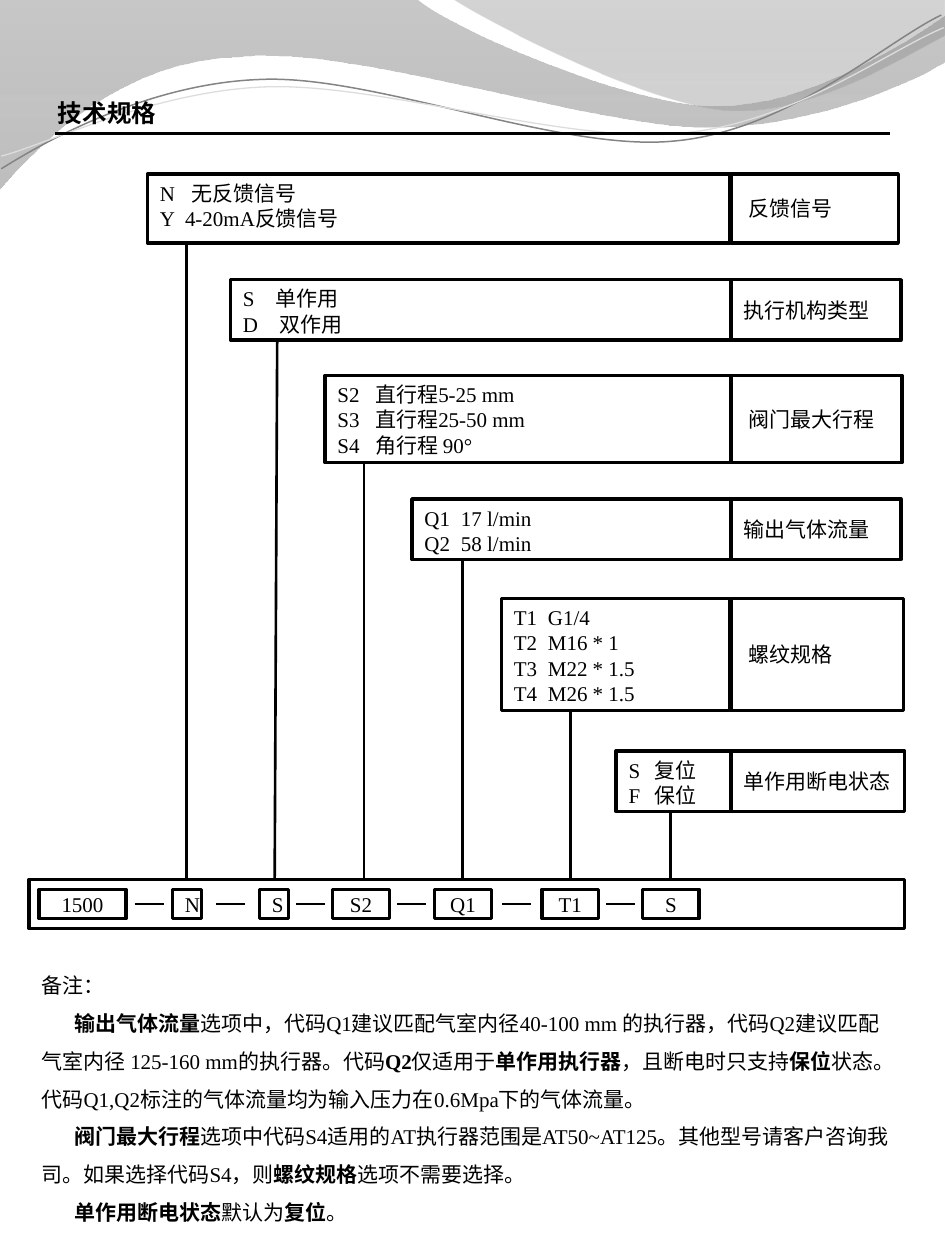
from itertools import pairwise

from lxml.etree import SubElement
from pptx import Presentation
from pptx.dml.color import RGBColor
from pptx.enum.shapes import MSO_CONNECTOR, MSO_SHAPE
from pptx.enum.text import MSO_ANCHOR as Anchor, PP_ALIGN as Align
from pptx.oxml.ns import qn
from pptx.util import Emu, Inches, Pt

BLACK = RGBColor(0x00, 0x00, 0x00)
WHITE = RGBColor(0xFF, 0xFF, 0xFF)
GREY = RGBColor(0x84, 0x84, 0x84)
GREY_LOW = RGBColor(0x88, 0x88, 0x88)
DARK_GREY = RGBColor(0x6F, 0x6F, 0x6F)
MID_GREY = RGBColor(0x9D, 0x9D, 0x9D)
PALE_GREY = RGBColor(0xDD, 0xDD, 0xDD)
SERIF, CJK = "Times New Roman", "Noto Sans CJK SC"

# The slide is a grid of 75 columns by 100 rows of square cells
WIDTH, HEIGHT = Inches(7.5), Inches(10)
CELL = WIDTH / 75
DIVIDER = 58  # column where the option labels begin
DASH = 2.3    # length of a dash between two codes

# code, code box (left, width), stem columns (top, bottom),
# option box (left, top, right, height), right edge of the choices,
# label, label inset, choices (code, tab width, meaning)
OPTIONS = [
    ("N", (13.7, 2.3), (14.8, 14.8), (11.7, 13.8, 71.3, 5.5), 57.9, "反馈信号", 1.4,
     [("N", 2.5, "无反馈信号"), ("Y", 2, "4-20mA反馈信号")]),
    ("S", (20.6, 2.3), (22, 21.8), (18.3, 22.2, 71.5, 4.8), 58.6, "执行机构类型", 1,
     [("S", 2.6, "单作用"), ("D", 2.9, "双作用")]),
    ("S2", (26.4, 4.5), (28.9, 28.9), (25.8, 29.8, 71.6, 6.9), 58, "阀门最大行程", 1.4,
     [("S2", 3, "直行程5-25 mm"), ("S3", 3, "直行程25-50 mm"), ("S4", 3, "角行程 90°")]),
    ("Q1", (34.5, 4.5), (36.7, 36.7), (32.7, 39.6, 71.5, 4.8), 58.6, "输出气体流量", 1,
     [("Q1", 2.9, "17 l/min"), ("Q2", 2.9, "58 l/min")]),
    ("T1", (43, 4.5), (45.3, 45.3), (39.8, 47.5, 71.7, 8.9), 57.9, "螺纹规格", 1.4,
     [("T1", 2.7, "G1/4"), ("T2", 2.7, "M16 * 1"),
      ("T3", 2.7, "M22 * 1.5"), ("T4", 2.7, "M26 * 1.5")]),
    ("S", (51, 4.5), (53.2, 53.2), (48.9, 59.6, 71.8, 4.8), 58.9, "单作用断电状态", 1,
     [("S", 2.1, "复位"), ("F", 2.1, "保位")]),
]

# Notes: runs alternate between regular and bold, starting with regular
NOTES = [
    ["备注："],
    ["", "输出气体流量",
     "选项中，代码Q1建议匹配气室内径40-100 mm 的执行器，代码Q2建议匹配气室内径 125-160 mm的执行器。代码",
     "Q2", "仅适用于", "单作用执行器", "，且断电时只支持", "保位",
     "状态。代码Q1,Q2标注的气体流量均为输入压力在0.6Mpa下的气体流量。"],
    ["", "阀门最大行程",
     "选项中代码S4适用的AT执行器范围是AT50~AT125。其他型号请客户咨询我司。如果选择代码S4，则",
     "螺纹规格", "选项不需要选择。"],
    ["", "单作用断电状态", "默认为", "复位", "。"],
]


def cells(count):
    return Emu(round(count * CELL))


def place(shape, box):
    shape.left, shape.top, shape.width, shape.height = map(cells, box)


def set_font(paragraph, size=12, latin=SERIF):
    font = paragraph.font
    font.size, font.name, font.color.rgb = Pt(size), latin, BLACK
    SubElement(font._element, qn("a:ea"), typeface=CJK)


def set_indent(paragraph, margin, first):
    properties = paragraph._p.get_or_add_pPr()
    properties.set("marL", str(cells(margin)))
    properties.set("indent", str(cells(first)))


def add_line(slide, start, end):
    line = slide.shapes.add_connector(
        MSO_CONNECTOR.STRAIGHT, *map(cells, (*start, *end)))
    line.line.color.rgb, line.line.width = BLACK, Pt(1.5)
    SubElement(line._element.spPr, qn("a:effectLst"))


def add_box(slide, box, lines=(), align=Align.LEFT, anchor=Anchor.MIDDLE, inset=1):
    shape = slide.shapes.add_shape(MSO_SHAPE.RECTANGLE, *map(cells, box))
    shape.shadow.inherit = False
    shape.fill.solid()
    shape.fill.fore_color.rgb = WHITE
    shape.line.color.rgb, shape.line.width = BLACK, Pt(2)
    frame = shape.text_frame
    frame.vertical_anchor = anchor
    frame.margin_left = cells(inset)
    frame.text = "\n".join(lines)
    for paragraph in frame.paragraphs:
        paragraph.alignment = align
        set_font(paragraph)
    return shape


# Header waves
def add_curve(slide, start, controls, corners=(), closed=False):
    """Join cubic curves, three control points each, then straight lines."""
    builder = slide.shapes.build_freeform(*map(cells, start), scale=1.0)
    builder.add_line_segments(
        [tuple(map(cells, point)) for point in [*controls, *corners]], close=closed)
    shape = builder.convert_to_shape()
    shape.shadow.inherit = False
    # Turn each three line segments into one Bezier segment
    segments = list(shape._element.iter(qn("a:lnTo")))[:len(controls)]
    for first in range(0, len(segments), 3):
        trio = segments[first:first + 3]
        outline = trio[0].getparent()
        curve = SubElement(outline, qn("a:cubicBezTo"))
        outline.replace(trio[0], curve)
        for segment in trio:
            curve.append(segment[0])
        for segment in trio[1:]:
            outline.remove(segment)
    return shape


def fill_wave(shape, stops):
    shape.line.fill.background()
    shape.fill.gradient()
    shape.fill.gradient_angle = 270
    for stop, (position, color, opacity) in zip(shape.fill.gradient_stops, stops):
        stop.position, stop.color.rgb = position, color
        SubElement(stop._gs[0], qn("a:alpha"), val=str(opacity * 1000))


def draw_waves(slide):
    broad = add_curve(
        slide, (0, -0.1),
        [(11, -0.1), (22, -0.1), (33, -0.1),
         (35.7, 2.2), (49.8, 8.4), (56.9, 8.4), (64, 8.4), (71.9, 3.4), (75, 1.2),
         (75, 2.4), (75.1, 3.6), (75.1, 4.8),
         (73.8, 5.8), (65.2, 10.1), (55.9, 10.1), (46.6, 10), (28.6, 3.7), (19.3, 4.5),
         (9.7, 4.7), (3.4, 11.1), (-0.1, 15.1)], closed=True)
    fill_wave(broad, [(0, GREY, 45), (1, GREY_LOW, 55)])
    corner = add_curve(
        slide, (35.9, -0.1),
        [(38.2, 1.5), (51.1, 8.2), (57.7, 8.7), (64.2, 9.2), (72.1, 4.3), (75, 2.8)],
        [(75, 0)], closed=True)
    fill_wave(corner, [(0, DARK_GREY, 30), (0.8, MID_GREY, 45)])
    strands = [
        (GREY, 0.85, (-0.13, 11.64),
         [(3.48, 9.6), (11.88, 5.4), (20.79, 5.52), (29.7, 5.54), (44.29, 12.43),
          (53.32, 11.95), (62.45, 11.58), (70.47, 4.85), (74.97, 2.96)]),
        (PALE_GREY, 0.75, (-0.07, 10.63),
         [(3.47, 9.9), (12.26, 6.01), (21.26, 6.13), (30.27, 6.26), (44.72, 11.74),
          (53.65, 11.36), (62.67, 11.09), (70.64, 5.56), (75.13, 3.97)]),
    ]
    for color, width, start, controls in strands:
        strand = add_curve(slide, start, controls)
        strand.rotation = -2.7
        strand.fill.background()
        strand.line.color.rgb, strand.line.width = color, Pt(width)


def draw_title(slide, box):
    title = slide.shapes.title
    slide.shapes._spTree.append(title._element)  # in front of the waves
    place(title, box)
    title.text_frame.text = "技术规格"
    title.text_frame.vertical_anchor = Anchor.TOP
    paragraph = title.text_frame.paragraphs[0]
    paragraph.alignment, paragraph.font.bold = Align.LEFT, True
    set_font(paragraph, 14, CJK)
    left, top, _, height = box
    rule = top + height - 0.1
    add_line(slide, (left + 0.8, rule), (70.6, rule))


def draw_option(slide, box, reach, label, inset, choices):
    left, top, right, height = box
    lines = [f"{code}\t{meaning}" for code, _, meaning in choices]
    shape = add_box(slide, (left, top, reach - left, height), lines, anchor=Anchor.TOP)
    for paragraph, (_, tab, _) in zip(shape.text_frame.paragraphs, choices):
        set_indent(paragraph, tab, -tab)
    add_box(slide, (DIVIDER, top, right - DIVIDER, height), [label], inset=inset)


def draw_order_code(slide, box):
    """Code bar, with a stem from each code up to its options."""
    left, top, _, height = box
    add_box(slide, box)
    codes = [("1500", (left + 0.8, 6.9))] + [option[:2] for option in OPTIONS]
    for code, (code_left, width) in codes:
        add_box(slide, (code_left, top + 0.8, width, 2.3), [code], Align.CENTER)
    middle = top + height / 2
    for (_, (before, width)), (_, (after, _)) in pairwise(codes):
        start = (before + width + after - DASH) / 2
        add_line(slide, (start, middle), (start + DASH, middle))
    for _, _, (upper, lower), (_, option_top, _, option_height), *_ in OPTIONS:
        add_line(slide, (upper, option_top + option_height), (lower, top))


def draw_notes(slide, box):
    body = slide.placeholders[1]
    slide.shapes._spTree.append(body._element)
    place(body, box)
    frame = body.text_frame
    for number, texts in enumerate(NOTES):
        paragraph = frame.add_paragraph() if number else frame.paragraphs[0]
        paragraph.line_spacing, paragraph.space_before = 1.5, Pt(0)
        set_indent(paragraph, 0, 2.6 if number else 0)
        SubElement(paragraph._p.get_or_add_pPr(), qn("a:buNone"))
        set_font(paragraph)
        for position, text in enumerate(texts):
            if text:
                run = paragraph.add_run()
                run.text, run.font.bold = text, position % 2 == 1


def main():
    presentation = Presentation()
    presentation.slide_width, presentation.slide_height = WIDTH, HEIGHT
    slide = presentation.slides.add_slide(presentation.slide_layouts[1])
    draw_waves(slide)
    draw_title(slide, (3.6, 7.3, 14.2, 3.4))
    draw_notes(slide, (2.3, 75.7, 69.5, 25.2))
    for _, _, _, *option in OPTIONS:
        draw_option(slide, *option)
    draw_order_code(slide, (2.3, 69.8, 69.5, 3.9))
    presentation.save("out.pptx")


if __name__ == "__main__":
    main()
